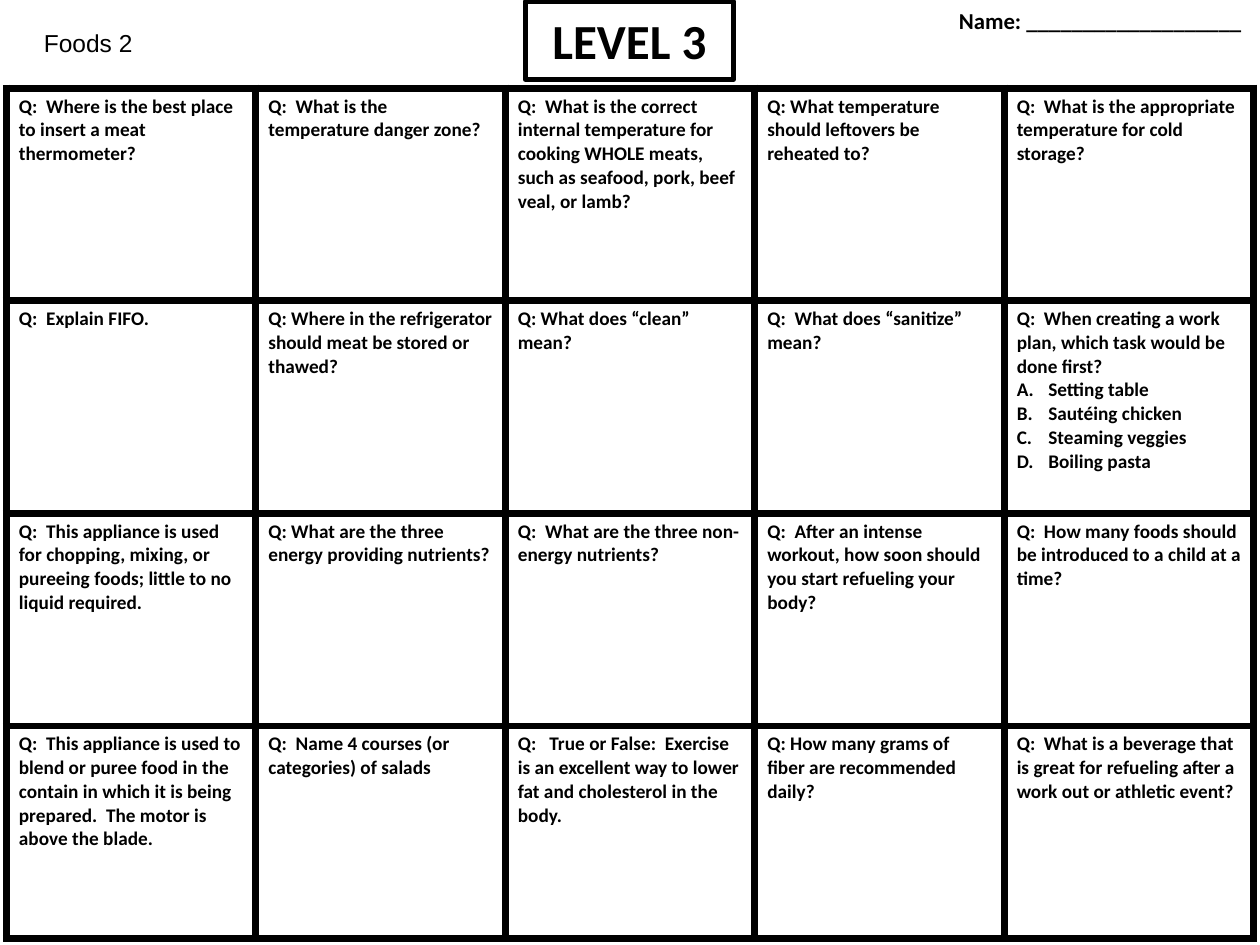
from lxml import etree
from pptx import Presentation
from pptx import util as u
from pptx.dml.color import RGBColor
from pptx.enum import text
from pptx.oxml import ns

BLACK = RGBColor(0x00, 0x00, 0x00)
WHITE = RGBColor(0xFF, 0xFF, 0xFF)

QUESTIONS = [
    ["Q:  Where is the best place to insert a meat thermometer?",
     "Q:  What is the temperature danger zone?",
     "Q:  What is the correct internal temperature for cooking WHOLE meats, "
     "such as seafood, pork, beef veal, or lamb?",
     "Q: What temperature should leftovers be reheated to?",
     "Q:  What is the appropriate temperature for cold storage?"],
    ["Q:  Explain FIFO.",
     "Q: Where in the refrigerator should meat be stored or thawed?",
     "Q: What does “clean” mean?",
     "Q:  What does “sanitize” mean?",
     "Q:  When creating a work plan, which task would be done first?"],
    ["Q:  This appliance is used for chopping, mixing, or pureeing foods; "
     "little to no liquid required.",
     "Q: What are the three energy providing nutrients?",
     "Q:  What are the three non-energy nutrients?",
     "Q:  After an intense workout, how soon should you start refueling your body?",
     "Q:  How many foods should be introduced to a child at a time?"],
    ["Q:  This appliance is used to blend or puree food in the contain in which "
     "it is being prepared.  The motor is above the blade.",
     "Q:  Name 4 courses (or categories) of salads",
     "Q:   True or False:  Exercise is an excellent way to lower fat and "
     "cholesterol in the body.",
     "Q: How many grams of fiber are recommended daily?",
     "Q:  What is a beverage that is great for refueling after a work out or "
     "athletic event?"],
]
TASK_CHOICES = ["Setting table", "Sautéing chicken", "Steaming veggies", "Boiling pasta"]


class Worksheet:
    """Holds the text style and the current slide."""

    heading = {"name": "Calibri", "size": u.Pt(28), "bold": True}
    name_line = {"name": "Calibri", "size": u.Pt(13), "bold": True}
    course = {"name": "Arial", "size": u.Pt(14), "bold": False}
    question = {"name": "Calibri", "size": u.Pt(11), "bold": True}
    border_width = u.Pt(4.5)

    def __init__(self, slide):
        self.slide = slide

    def add_words(self, paragraph, words, style):
        run = paragraph.add_run()
        run.text = words
        for key, value in style.items():
            setattr(run.font, key, value)
        run.font.color.rgb = BLACK

    def place(self, shape, left, top, width, height):
        box = {"left": left, "top": top, "width": width, "height": height}
        for key, value in box.items():
            setattr(shape, key, u.Inches(value))

    def placeholder(self, index, words, style, box, anchor):
        shape = self.slide.placeholders[index]
        self.place(shape, *box)
        frame = shape.text_frame
        frame.auto_size = text.MSO_AUTO_SIZE.NONE
        frame.vertical_anchor = anchor
        frame.paragraphs[0].alignment = text.PP_ALIGN.CENTER
        self.add_words(frame.paragraphs[0], words, style)
        return shape

    def text_box(self, words, style, box):
        shape = self.slide.shapes.add_textbox(*map(u.Inches, box))
        shape.text_frame.word_wrap = True
        self.add_words(shape.text_frame.paragraphs[0], words, style)

    def border(self, cell):
        properties = cell._tc.get_or_add_tcPr()
        for position, side in enumerate(("lnL", "lnR", "lnT", "lnB")):
            line = etree.Element(ns.qn(f"a:{side}"), w=str(self.border_width))
            fill = etree.SubElement(line, ns.qn("a:solidFill"))
            etree.SubElement(fill, ns.qn("a:srgbClr"), val=str(BLACK))
            properties.insert(position, line)

    def grid(self, rows, box):
        frame = self.slide.shapes.add_table(len(rows), len(rows[0]), *map(u.Inches, box))
        table = frame.table
        table.first_row = table.horz_banding = False
        for row, questions in enumerate(rows):
            for column, words in enumerate(questions):
                cell = table.cell(row, column)
                cell.fill.solid()
                cell.fill.fore_color.rgb = WHITE
                self.border(cell)
                self.add_words(cell.text_frame.paragraphs[0], words, self.question)
        return table

    def lettered_list(self, cell, choices):
        for choice in choices:
            paragraph = cell.text_frame.add_paragraph()
            self.add_words(paragraph, choice, self.question)
            properties = paragraph._p.get_or_add_pPr()
            indent = u.Inches(0.25)
            properties.set("marL", str(indent))
            properties.set("indent", str(-indent))
            etree.SubElement(properties, ns.qn("a:buAutoNum"), type="alphaUcPeriod")


def main():
    presentation = Presentation()
    presentation.slide_width = u.Inches(10)
    presentation.slide_height = u.Inches(7.5)
    sheet = Worksheet(presentation.slides.add_slide(presentation.slide_layouts[0]))

    # Header: course, level and name line
    sheet.text_box("Foods 2", sheet.course, (0.25, 0.17, 1.67, 0.34))
    level = sheet.placeholder(0, "LEVEL 3", sheet.heading, (4.17, 0.01, 1.65, 0.62),
                              text.MSO_ANCHOR.MIDDLE)
    level.line.color.rgb = BLACK
    level.line.width = u.Pt(3)
    sheet.placeholder(1, "Name: " + "_" * 19, sheet.name_line, (7.46, 0, 2.54, 0.36),
                      text.MSO_ANCHOR.TOP)

    # Question grid, with answer choices for the work plan question
    table = sheet.grid(QUESTIONS, (0.05, 0.7, 9.9, 6.75))
    sheet.lettered_list(table.cell(1, 4), TASK_CHOICES)

    presentation.save("out.pptx")


if __name__ == "__main__":
    main()
